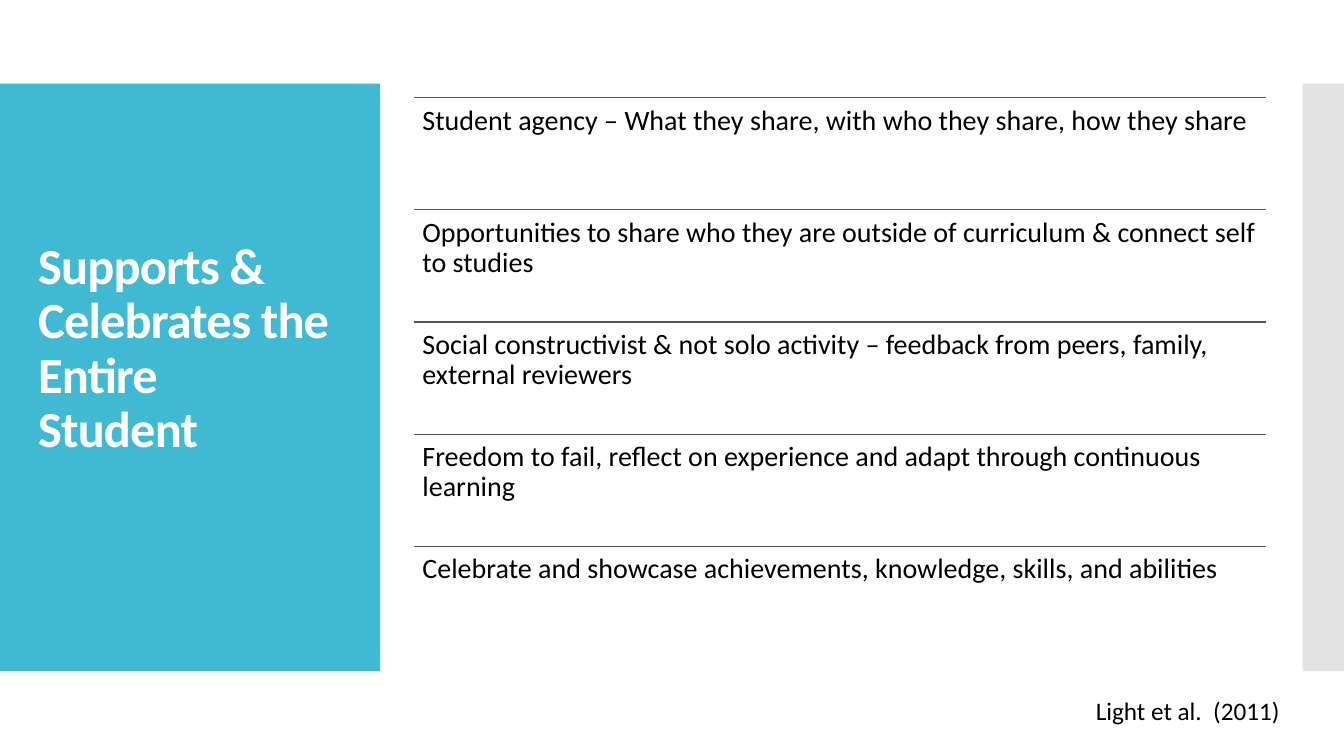
from dataclasses import dataclass

import pptx
import pptx.dml.color
import pptx.enum.shapes
import pptx.enum.text
import pptx.oxml.ns
import pptx.oxml.xmlchemy
import pptx.util
from lxml import etree

Inches = pptx.util.Inches
Pt = pptx.util.Pt
RGBColor = pptx.dml.color.RGBColor
qn = pptx.oxml.ns.qn

TEAL = RGBColor(0x40, 0xBA, 0xD2)
GREY = RGBColor(0xC8, 0xC8, 0xC8)
RULE_GREY = RGBColor(0x54, 0x54, 0x54)
WHITE = RGBColor(0xFF, 0xFF, 0xFF)
BLACK = RGBColor(0x00, 0x00, 0x00)
FONT = "Calibri"

# Layout of the list, in inches
LIST_LEFT, LIST_TOP, LIST_WIDTH = 4.11, 0.97, 8.45
ROW_HEIGHT = 1.1125
ROW_INSET = 0.08

STATEMENTS = [
    "Student agency – What they share, with who they share, how they share",
    "Opportunities to share who they are outside of curriculum & connect self to studies",
    "Social constructivist & not solo activity – feedback from peers, family, external reviewers",
    "Freedom to fail, reflect on experience and adapt through continuous learning",
    "Celebrate and showcase achievements, knowledge, skills, and abilities",
]


@dataclass
class Box:
    left: float
    top: float
    width: float
    height: float

    def lengths(self) -> tuple:
        return tuple(map(Inches, (self.left, self.top, self.width, self.height)))


def add_panel(slide, box: Box, color: RGBColor, opacity: int = 100) -> None:
    """Add a rectangle without outline; opacity is in percent."""
    panel = slide.shapes.add_shape(
        pptx.enum.shapes.MSO_SHAPE.RECTANGLE, *box.lengths())
    panel.shadow.inherit = False
    panel.fill.solid()
    panel.fill.fore_color.rgb = color
    panel.line.fill.background()
    if opacity < 100:
        color_element = panel._element.spPr.find(qn("a:solidFill"))[0]
        etree.SubElement(color_element, qn("a:alpha"), val=str(opacity * 1000))


def add_text(slide, box: Box, text: str, size: float, color: RGBColor = BLACK,
             line_spacing: float = 1.0):
    """Add a wrapping one-paragraph text box and return its text frame."""
    frame = slide.shapes.add_textbox(*box.lengths()).text_frame
    frame.word_wrap = True
    paragraph = frame.paragraphs[0]
    paragraph.text = text
    paragraph.line_spacing = line_spacing
    paragraph.font.name = FONT
    paragraph.font.size = Pt(size)
    paragraph.font.color.rgb = color
    return frame


def add_rule(slide, left: float, top: float, width: float) -> None:
    """Add a thin horizontal line."""
    rule = slide.shapes.add_connector(
        pptx.enum.shapes.MSO_CONNECTOR.STRAIGHT,
        Inches(left), Inches(top), Inches(left + width), Inches(top))
    rule.line.color.rgb = RULE_GREY
    rule.line.width = Pt(0.85)
    etree.SubElement(rule._element.spPr, qn("a:effectLst"))


def add_title(slide) -> None:
    """Add the heading, set slightly above the middle of the teal panel."""
    frame = add_text(slide, Box(0.28, 1.23, 3.22, 4.48),
                     "Supports & Celebrates the Entire", 36, WHITE, 0.9)
    frame.vertical_anchor = pptx.enum.text.MSO_ANCHOR.MIDDLE
    paragraph = frame.paragraphs[0]
    paragraph.font.bold = True
    paragraph.add_line_break()
    paragraph.add_run().text = "Student"
    for run in paragraph.runs:
        run.font._element.set("spc", "-60")


def add_statement(slide, index: int, text: str) -> None:
    """Add one row of the list: a rule with its text below."""
    top = LIST_TOP + index * ROW_HEIGHT
    add_rule(slide, LIST_LEFT, top, LIST_WIDTH)
    frame = add_text(slide, Box(LIST_LEFT, top, LIST_WIDTH, ROW_HEIGHT),
                     text, 20, line_spacing=0.9)
    frame.margin_left = frame.margin_right = Inches(ROW_INSET)
    frame.margin_top = frame.margin_bottom = Inches(ROW_INSET)


def main() -> None:
    presentation = pptx.Presentation()
    presentation.slide_width = Inches(13.33)
    presentation.slide_height = Inches(7.5)
    slide = presentation.slides.add_slide(presentation.slide_layouts[6])

    # Side panels and heading
    add_panel(slide, Box(0, 0.83, 3.77, 5.83), TEAL)
    add_panel(slide, Box(12.92, 0.83, 0.41, 5.83), GREY, opacity=50)
    add_title(slide)

    # Ruled list
    for index, text in enumerate(STATEMENTS):
        add_statement(slide, index, text)

    # Citation
    add_text(slide, Box(10.77, 6.85, 2.4, 0.4), "Light et al.  (2011)", 18)

    presentation.save("out.pptx")


if __name__ == "__main__":
    main()
